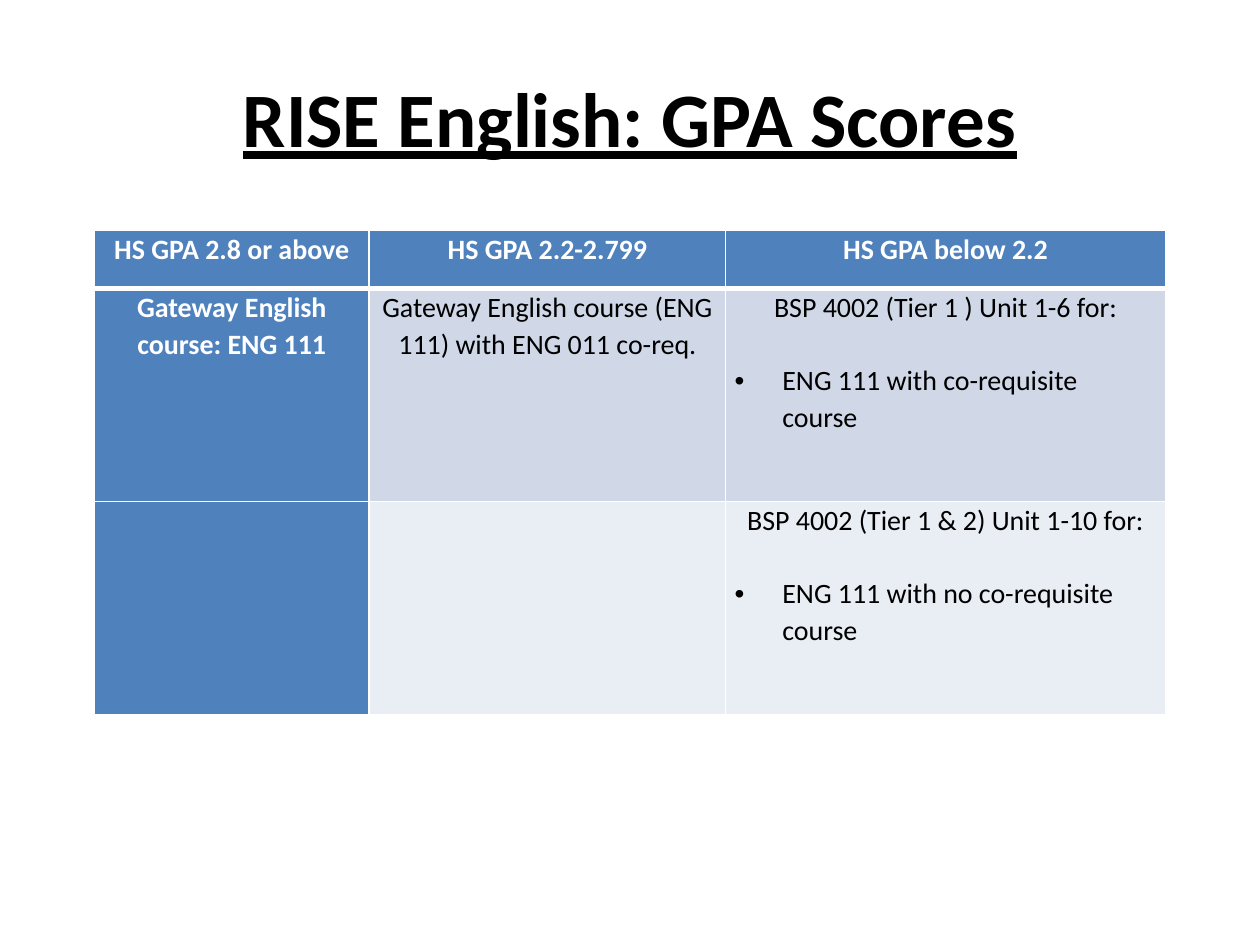
from lxml.etree import SubElement
from pptx import Presentation
from pptx.dml.color import RGBColor
from pptx.enum.text import MSO_ANCHOR, PP_ALIGN
from pptx.oxml.ns import qn
from pptx.util import Inches, Pt

WHITE, BLACK, BLUE = "FFFFFF", "000000", "4F81BD"
BANDS = ["D0D8E8", "E9EDF4"]
COLS = [2.18, 2.83, 3.49]
ROWS = [0.46, 1.69, 1.69]

# Each cell is a list of lines; a line that starts with • is a bullet
CELLS = [
    [["HS GPA 2.8 or above"], ["HS GPA 2.2-2.799"], ["HS GPA below 2.2"]],
    [["Gateway English course: ENG 111"],
     ["Gateway English course (ENG 111) with ENG 011 co-req."],
     ["BSP 4002 (Tier 1 ) Unit 1-6 for:",
      "•ENG 111 with co-requisite course"]],
    [[], [],
     ["BSP 4002 (Tier 1 & 2) Unit 1-10 for:",
      "•ENG 111 with no co-requisite course"]],
]


def color(text):
    return RGBColor.from_string(text)


def style(item, form):
    for name, value in form.items():
        setattr(item, name, value)


def set_font(para, hue, form):
    style(para.font, {"name": "Calibri", **form})
    para.font.color.rgb = color(hue)


def add_title(slide, text):
    box = slide.shapes.add_textbox(Inches(0.5), Inches(0.3),
                                   Inches(9), Inches(1.25))
    frame = box.text_frame
    style(frame, {"word_wrap": True, "vertical_anchor": MSO_ANCHOR.MIDDLE})
    para = frame.paragraphs[0]
    para.text = text
    para.alignment = PP_ALIGN.CENTER
    set_font(para, BLACK, {"size": Pt(44), "bold": True, "underline": True})


def add_bullet(para):
    props = para._p.get_or_add_pPr()
    props.set("marL", str(Inches(0.38)))
    props.set("indent", str(-Inches(0.38)))
    SubElement(props, qn("a:buFont"), typeface="Arial")
    SubElement(props, qn("a:buChar"), char="•")


def add_border(cell, side, width):
    line = SubElement(cell._tc.get_or_add_tcPr(), qn("a:ln" + side),
                      w=str(Pt(width)))
    fill = SubElement(line, qn("a:solidFill"))
    SubElement(fill, qn("a:srgbClr"), val=WHITE)


def fill_cell(cell, lines, row, col):
    head = row == 0 or col == 0
    style(cell, {"margin_left": Inches(0.07), "margin_right": Inches(0.07),
                 "margin_top": 0, "margin_bottom": 0})

    # White rules, thicker under the header row
    for side in "LRTB":
        thick = (row, side) in [(0, "B"), (1, "T")]
        add_border(cell, side, 3 if thick else 1)
    cell.fill.solid()
    cell.fill.fore_color.rgb = color(BLUE if head else BANDS[row - 1])

    frame = cell.text_frame
    for i, text in enumerate(lines):
        para = frame.add_paragraph() if i else frame.paragraphs[0]
        form = {"line_spacing": 1.07, "alignment": PP_ALIGN.CENTER}
        if text.startswith("•"):
            form.update(alignment=PP_ALIGN.LEFT, space_before=Pt(21))
        style(para, form)
        if text.startswith("•"):
            add_bullet(para)
        para.text = text.lstrip("•")
        set_font(para, WHITE if head else BLACK,
                 {"size": Pt(16), "bold": head})


def add_scores(slide):
    shape = slide.shapes.add_table(len(ROWS), len(COLS), Inches(0.75),
                                   Inches(1.83), Inches(sum(COLS)),
                                   Inches(sum(ROWS)))
    table = shape.table
    for col, width in zip(table.columns, COLS):
        col.width = Inches(width)
    for row, height in zip(table.rows, ROWS):
        row.height = Inches(height)
    for r, line in enumerate(CELLS):
        for c, lines in enumerate(line):
            fill_cell(table.cell(r, c), lines, r, c)


def main():
    deck = Presentation()
    style(deck, {"slide_width": Inches(10), "slide_height": Inches(7.5)})
    slide = deck.slides.add_slide(deck.slide_layouts[6])
    add_title(slide, "RISE English: GPA Scores")
    add_scores(slide)
    deck.save("out.pptx")


if __name__ == "__main__":
    main()
